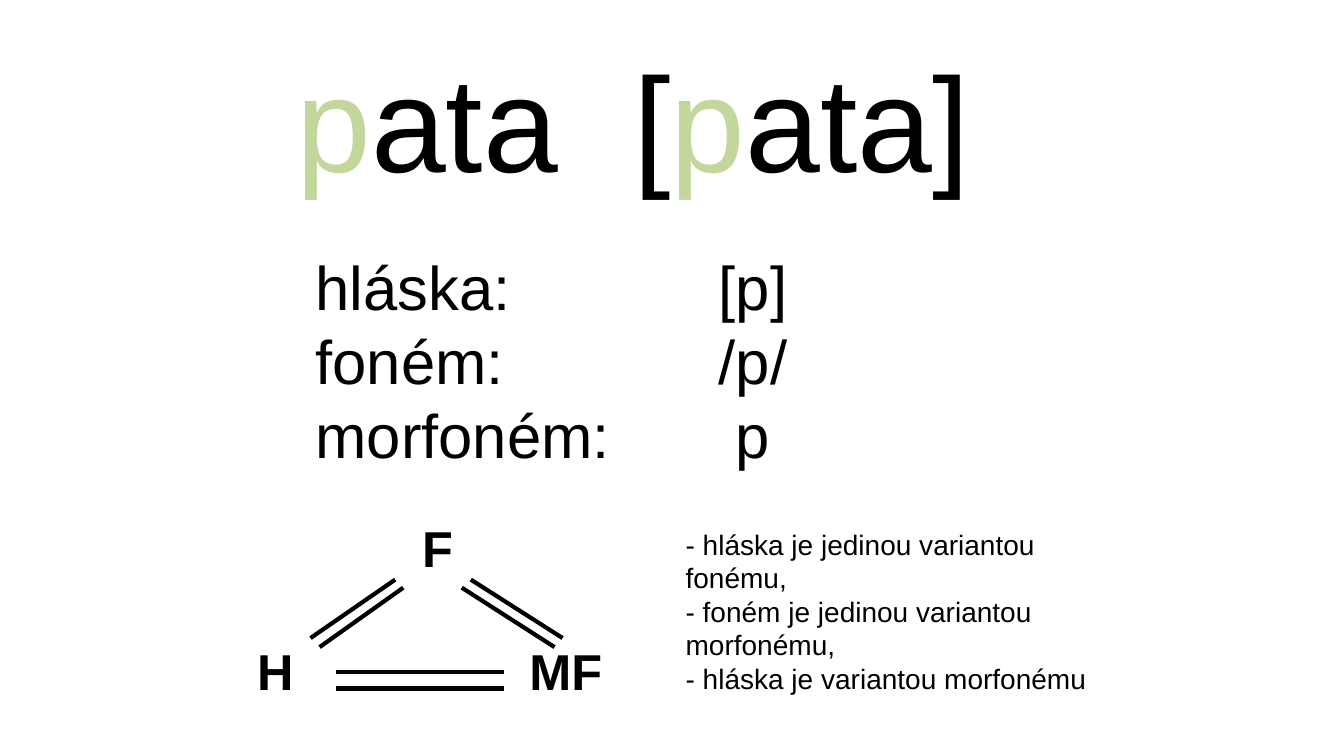
import pptx
import pptx.dml.color
import pptx.enum.shapes
import pptx.enum.text
import pptx.oxml
import pptx.oxml.ns
import pptx.util

Inches = pptx.util.Inches
Pt = pptx.util.Pt
BLACK = "000000"
GREEN = "C3D69B"


def color(value):
    return pptx.dml.color.RGBColor.from_string(value)


class Page:
    """Holds the style and the current slide."""
    font = "Arial"
    inset = Inches(0.05)
    line_width = Pt(3)

    def __init__(self, deck):
        self.slide = deck.slides.add_slide(deck.slide_layouts[6])

    def text(self, left, top, width, height, lines, size, bold=False, tab=None):
        """Add a text box; each line is a list of (text, color) spans."""
        box = self.slide.shapes.add_textbox(
            Inches(left), Inches(top), Inches(width), Inches(height))
        frame = box.text_frame
        frame.word_wrap = True
        frame.margin_left = frame.margin_right = self.inset
        frame.margin_top = frame.margin_bottom = self.inset
        for index, spans in enumerate(lines):
            para = frame.add_paragraph() if index else frame.paragraphs[0]
            if tab:
                self.add_tab(para, tab)
            for content, fill in spans:
                span = para.add_run()
                span.text = content
                span.font.name = self.font
                span.font.size = Pt(size)
                span.font.bold = bold
                span.font.color.rgb = color(fill)
        return frame

    def add_tab(self, para, position):
        properties = para._p.get_or_add_pPr()
        stops = pptx.oxml.parse_xml(
            f'<a:tabLst {pptx.oxml.ns.nsdecls("a")}>'
            f'<a:tab pos="{Inches(position)}" algn="l"/></a:tabLst>')
        properties.append(stops)

    def line(self, start, end):
        connector = self.slide.shapes.add_connector(
            pptx.enum.shapes.MSO_CONNECTOR.STRAIGHT,
            *(Inches(value) for value in (*start, *end)))
        connector.line.color.rgb = color(BLACK)
        connector.line.width = self.line_width
        connector._element.spPr.append(pptx.oxml.parse_xml(
            f'<a:effectLst {pptx.oxml.ns.nsdecls("a")}/>'))


def main():
    deck = pptx.Presentation()
    deck.slide_width = Inches(13.33)
    deck.slide_height = Inches(7.5)
    page = Page(deck)

    # Word and its pronunciation
    page.text(2.89, 0.33, 7.02, 1.72,
              [[("p", GREEN), ("ata\t[", BLACK), ("p", GREEN), ("ata]", BLACK)]],
              96, tab=3.34)

    # Units of the sound system
    units = ["hláska:\t[p]", "foném:\t/p/", "morfoném:\t p"]
    page.text(3.08, 2.42, 7.58, 2.32, [[(unit, BLACK)] for unit in units],
              44, tab=4)

    # Triangle corners
    corners = page.text(2.5, 5.08, 3.68, 1.92,
                        [[("F", BLACK)], [("H\tMF", BLACK)]],
                        36, bold=True, tab=2.7)
    top_corner, base_corners = corners.paragraphs
    top_corner.alignment = pptx.enum.text.PP_ALIGN.CENTER
    base_corners.space_before = Pt(45)

    # Double sides of the triangle
    sides = [
        ((3.92, 5.75), (3.08, 6.33)), ((4, 5.83), (3.17, 6.42)),
        ((4.58, 5.83), (5.5, 6.42)), ((4.67, 5.75), (5.58, 6.33)),
        ((3.33, 6.67), (5, 6.67)), ((3.33, 6.83), (5, 6.83)),
    ]
    for start, end in sides:
        page.line(start, end)

    # Explanation
    notes = [
        "- hláska je jedinou variantou fonému,",
        "- foném je jedinou variantou morfonému,",
        "- hláska je variantou morfonému",
    ]
    page.text(6.75, 5.18, 4.5, 1.45, [[(note, BLACK)] for note in notes], 20)

    deck.save("out.pptx")


if __name__ == "__main__":
    main()
